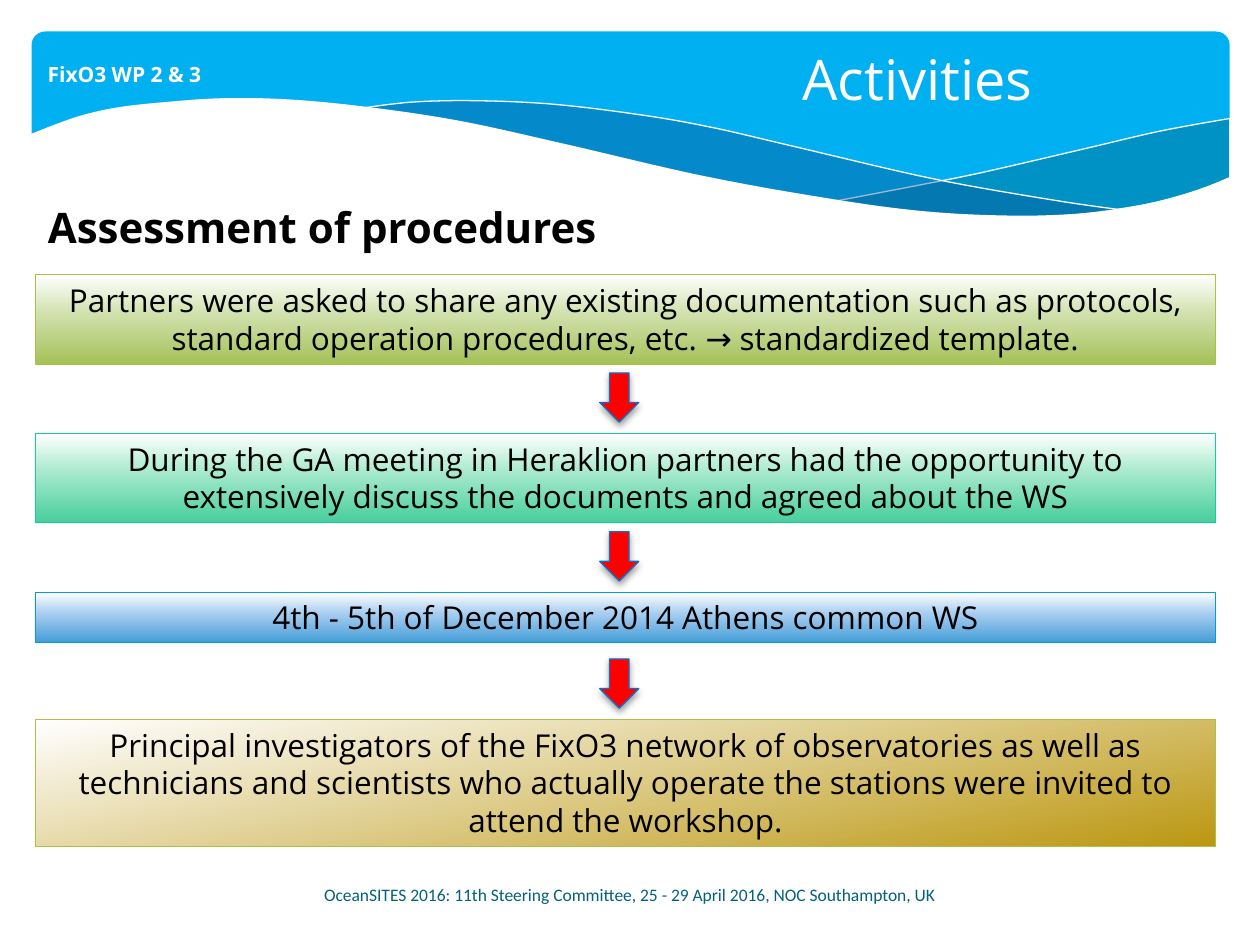
from dataclasses import dataclass

from lxml.etree import SubElement
from pptx import Presentation
from pptx.dml.color import RGBColor
from pptx.enum.shapes import MSO_SHAPE
from pptx.enum.text import MSO_ANCHOR, MSO_AUTO_SIZE, PP_ALIGN
from pptx.oxml import parse_xml
from pptx.oxml.ns import nsdecls, qn
from pptx.shapes.base import BaseShape
from pptx.slide import Slide
from pptx.util import Emu, Pt

PX_PER_INCH = 100
EMU_PER_PX = 914400 // PX_PER_INCH
CURVE_STEPS = 8
STEP_LEFT, STEP_WIDTH = 28, 937
ARROW_LEFT, ARROW_WIDTH, ARROW_HEIGHT = 476, 31, 39

Point = tuple[float, float]
Box = tuple[int, int, int, int]


@dataclass(frozen=True)
class Wave:
    """A filled band between smooth edges."""
    edges: tuple[list[Point], ...]
    color: str
    opacity: int
    outline: bool


@dataclass(frozen=True)
class Step:
    """A gradient box in the flow of activities."""
    text: str
    top: int
    height: int
    stops: tuple[tuple[int, str], ...]
    line: str
    angle: int = 90


@dataclass(frozen=True)
class Label:
    """Formatting of a single line of text."""
    text: str
    size: int
    color: str
    bold: bool = False
    font: str = "Open Sans"
    align: PP_ALIGN = PP_ALIGN.LEFT
    anchor: MSO_ANCHOR = MSO_ANCHOR.TOP


WAVES = [
    Wave(([(976, 94), (921, 104), (861, 118), (779, 137), (729, 147), (661, 160)],
          [(661, 160), (719, 167), (781, 172), (835, 172), (881, 167), (921, 160),
           (949, 152), (976, 141)]), "03495C", 29, True),
    Wave(([(893, 167), (837, 159), (741, 142), (629, 116), (569, 102), (514, 92),
           (442, 83), (380, 80), (328, 81), (286, 86)],
          [(286, 86), (342, 94), (404, 106), (449, 116), (530, 135), (601, 150),
           (665, 161), (722, 168), (785, 172), (838, 172), (893, 167)]), "0B5394", 40, True),
    Wave(([(977, 141), (940, 154), (899, 164), (850, 170), (793, 171), (726, 167),
           (648, 156), (555, 139), (447, 114), (365, 96), (292, 85), (230, 79),
           (177, 78), (132, 81), (95, 85), (67, 91), (46, 98), (23, 107)],
          [(23, 107), (23, 224)], [(23, 224), (977, 224)]), "FFFFFF", 100, False),
]
STEPS = [
    Step("Partners were asked to share any existing documentation such as protocols, "
         "standard operation procedures, etc. → standardized template.",
         218, 71, ((0, "FFFFFF"), (44, "D1E1AD"), (100, "A4C159")), "A5C249"),
    Step("During the GA meeting in Heraklion partners had the opportunity to "
         "extensively discuss the documents and agreed about the WS",
         344, 71, ((0, "FFFFFF"), (44, "A6E9CC"), (100, "46CE9C")), "10CF9B"),
    Step("4th - 5th of December 2014 Athens common WS",
         470, 40, ((0, "FFFFFF"), (44, "A5CCEF"), (100, "449DD8")), "009DD9"),
    Step("Principal investigators of the FixO3 network of observatories as well as "
         "technicians and scientists who actually operate the stations were invited "
         "to attend the workshop.",
         571, 101, ((0, "BB9711"), (100, "FFFFFF")), "A5C249", 259),
]
ARROW_TOPS = [296, 422, 523]


def px(value: float) -> Emu:
    """Convert pixels to EMU."""
    return Emu(round(value * EMU_PER_PX))


def rgb(color: str) -> RGBColor:
    """Convert a hex string to a colour."""
    return RGBColor.from_string(color)


def apply(target: object, values: dict[str, object]) -> None:
    """Set each named attribute on the target."""
    for name, value in values.items():
        setattr(target, name, value)


def place(shape: BaseShape, box: Box) -> None:
    """Move and size a shape."""
    apply(shape, dict(zip(("left", "top", "width", "height"), map(px, box))))


def write(shape: BaseShape, label: Label) -> None:
    """Write one formatted paragraph into a shape."""
    frame = shape.text_frame
    apply(frame, {"text": label.text, "word_wrap": True,
                  "auto_size": MSO_AUTO_SIZE.NONE, "vertical_anchor": label.anchor})
    paragraph = frame.paragraphs[0]
    apply(paragraph, {"alignment": label.align, "space_before": Pt(0)})
    font = paragraph.runs[0].font
    apply(font, {"name": label.font, "size": Pt(label.size), "bold": label.bold})
    font.color.rgb = rgb(label.color)


def paint(shape: BaseShape, fill: str, line: str | None = None) -> None:
    """Give a shape a flat fill, an optional thin line and no shadow."""
    shape.shadow.inherit = False
    shape.fill.solid()
    shape.fill.fore_color.rgb = rgb(fill)
    if line is None:
        shape.line.fill.background()
    else:
        shape.line.color.rgb = rgb(line)
        shape.line.width = Pt(0.75)


def smooth(points: list[Point]) -> list[Point]:
    """Sample a Catmull-Rom curve through the points."""
    padded = [points[0], *points, points[-1]]
    samples = [points[0]]
    for a, b, c, d in zip(padded, padded[1:], padded[2:], padded[3:]):
        for index in range(1, CURVE_STEPS + 1):
            t = index / CURVE_STEPS
            samples.append(tuple(
                (2 * q + (r - p) * t + (2 * p - 5 * q + 4 * r - s) * t ** 2
                 + (3 * q - p - 3 * r + s) * t ** 3) / 2
                for p, q, r, s in zip(a, b, c, d)))
    return samples


def draw_wave(slide: Slide, wave: Wave) -> None:
    """Draw a translucent wave band."""
    points = [(px(x), px(y)) for edge in wave.edges for x, y in smooth(edge)]
    builder = slide.shapes.build_freeform(*points[0])
    builder.add_line_segments(points[1:], close=True)
    shape = builder.convert_to_shape()
    paint(shape, wave.color, "FFFFFF" if wave.outline else None)
    if wave.opacity < 100:
        color = shape._element.spPr.find(qn("a:solidFill"))[0]
        SubElement(color, qn("a:alpha"), val=str(wave.opacity * 1000))


def draw_step(slide: Slide, step: Step) -> None:
    """Draw a gradient box with its centred text."""
    shape = slide.shapes.add_shape(
        MSO_SHAPE.RECTANGLE, *map(px, (STEP_LEFT, step.top, STEP_WIDTH, step.height)))
    paint(shape, "FFFFFF", step.line)
    stops = "".join(f'<a:gs pos="{position * 1000}"><a:srgbClr val="{color}"/></a:gs>'
                    for position, color in step.stops)
    gradient = parse_xml(f'<a:gradFill {nsdecls("a")} rotWithShape="1"><a:gsLst>{stops}</a:gsLst>'
                         f'<a:lin ang="{step.angle * 60000}" scaled="0"/></a:gradFill>')
    properties = shape._element.spPr
    properties.replace(properties.find(qn("a:solidFill")), gradient)
    write(shape, Label(step.text, 18, "000000", align=PP_ALIGN.CENTER))


def draw_arrow(slide: Slide, top: int) -> None:
    """Draw a red arrow with a soft shadow below it."""
    shape = slide.shapes.add_shape(
        MSO_SHAPE.DOWN_ARROW, *map(px, (ARROW_LEFT, top, ARROW_WIDTH, ARROW_HEIGHT)))
    paint(shape, "FF0000", "0F6FC6")
    shape._element.spPr.find(qn("a:effectLst")).append(parse_xml(
        f'<a:outerShdw {nsdecls("a")} blurRad="{Pt(4)}" dist="{Pt(2)}" dir="5400000" '
        'rotWithShape="0"><a:srgbClr val="000000"><a:alpha val="38000"/></a:srgbClr></a:outerShdw>'))


def add_label(slide: Slide, box: Box, label: Label) -> None:
    """Add a text box."""
    write(slide.shapes.add_textbox(*map(px, box)), label)


def main() -> None:
    """Build and save the slide."""
    presentation = Presentation()
    apply(presentation, {"slide_width": px(1000), "slide_height": px(750)})
    slide = presentation.slides.add_slide(presentation.slide_layouts[1])
    title, body = slide.placeholders

    banner = slide.shapes.add_shape(MSO_SHAPE.ROUNDED_RECTANGLE, *map(px, (25, 25, 951, 156)))
    banner.adjustments[0] = 0.07
    paint(banner, "00B0F0")
    for wave in WAVES:
        draw_wave(slide, wave)

    for placeholder in (body, title):
        slide.shapes._spTree.append(placeholder._element)
    place(body, (28, 155, 953, 63))
    write(body, Label("Assessment of procedures", 24, "000000", bold=True))
    properties = body.text_frame.paragraphs[0]._p.get_or_add_pPr()
    properties.set("marL", "0")
    properties.set("indent", "0")
    SubElement(properties, qn("a:buNone"))
    place(title, (457, 4, 543, 116))
    write(title, Label("Activities", 32, "FFFFFF", align=PP_ALIGN.CENTER,
                       anchor=MSO_ANCHOR.MIDDLE))
    add_label(slide, (28, 44, 480, 30), Label("FixO3 WP 2 & 3", 12, "FFFFFF", bold=True))

    for step in STEPS:
        draw_step(slide, step)
    for top in ARROW_TOPS:
        draw_arrow(slide, top)
    add_label(slide, (174, 690, 651, 40), Label(
        "OceanSITES 2016: 11th Steering Committee, 25 - 29 April 2016, NOC Southampton, UK",
        10, "04617B", font="Calibri", align=PP_ALIGN.CENTER, anchor=MSO_ANCHOR.MIDDLE))
    presentation.save("out.pptx")


if __name__ == "__main__":
    main()
